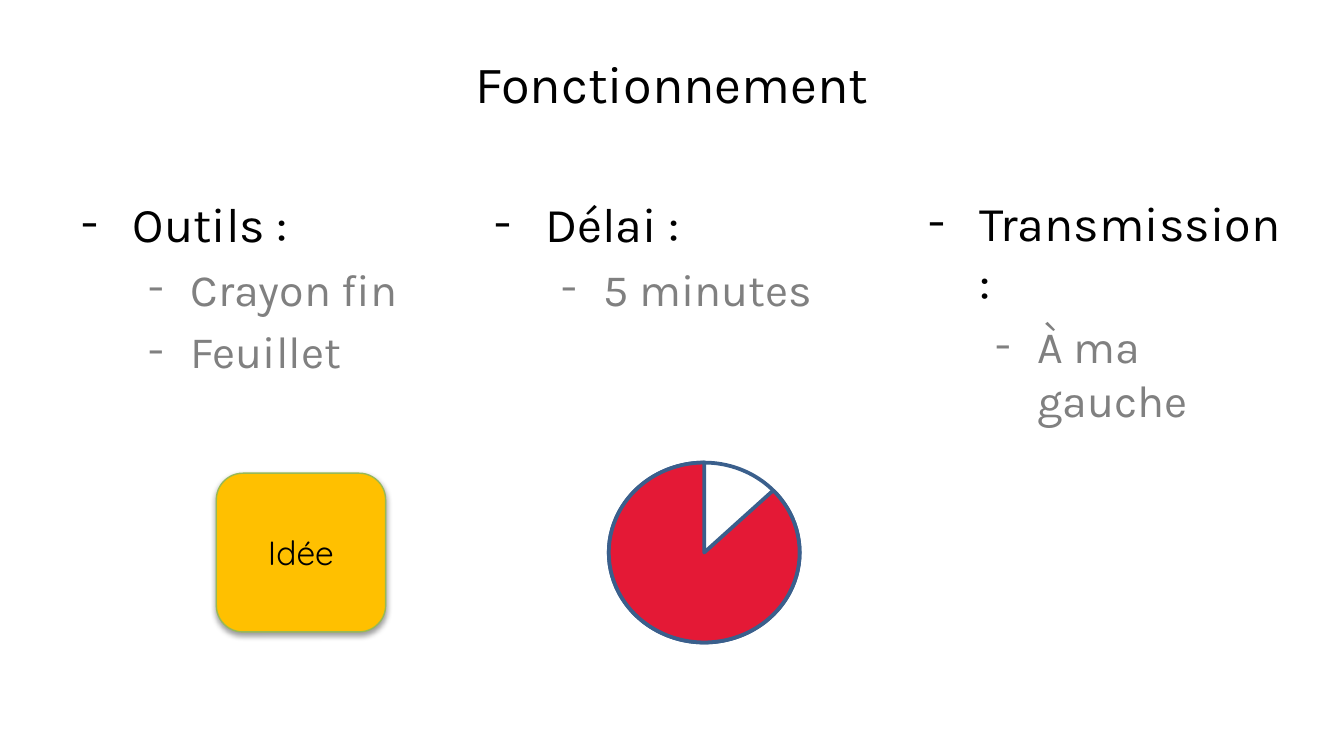
from lxml.etree import SubElement
from pptx import Presentation
from pptx.dml.color import RGBColor
from pptx.enum.shapes import MSO_SHAPE
from pptx.enum.text import MSO_ANCHOR, PP_ALIGN
from pptx.oxml.ns import qn
from pptx.util import Emu, Inches, Pt

# Widescreen, 16 by 9
WIDTH = Inches(10)
HEIGHT = Emu(WIDTH * 9 // 16)

BLACK = RGBColor(0x00, 0x00, 0x00)
GREY = RGBColor(0x80, 0x80, 0x80)
AMBER = RGBColor(0xFF, 0xC0, 0x00)
GREEN = RGBColor(0x98, 0xB9, 0x55)
RED = RGBColor(0xE4, 0x19, 0x36)
BLUE = RGBColor(0x3A, 0x5F, 0x8C)

# Left, top, width and height as shares of the slide
TITLE_AREA = (0, 0.059, 1, 0.068)
NOTE_AREA = (0.161, 0.626, 0.126, 0.21)
CLOCK_AREA = (0.453, 0.612, 0.142, 0.238)
COLUMNS = [
    ((0.051, 0.248, 0.409, 0.658), "Outils :", ["Crayon fin", "Feuillet"]),
    ((0.358, 0.248, 0.409, 0.294), "Délai :", ["5 minutes"]),
    ((0.681, 0.247, 0.283, 0.294), "Transmission :", ["À ma gauche"]),
]


def place(area):
    """Turn shares of the slide into lengths."""
    return [Emu(round(share * side))
            for share, side in zip(area, (WIDTH, HEIGHT, WIDTH, HEIGHT))]


def write(para, text, size=24, color=BLACK, font="Karla", align=None,
          before=0, indent=None, hanging=0, level=0):
    """Fill a paragraph; an indent gives it a dash bullet."""
    if indent is not None:
        props = para._p.get_or_add_pPr()
        props.set("marL", str(Inches(indent)))
        props.set("indent", str(-Inches(hanging)))
        SubElement(props, qn("a:buFont"), typeface=font)
        SubElement(props, qn("a:buChar"), char="-")
    para.level = level
    para.space_before = Pt(before)
    if align is not None:
        para.alignment = align
    span = para.add_run()
    span.text = text
    span.font.name = font
    span.font.size = Pt(size)
    span.font.color.rgb = color


def add_text_box(page, area):
    box = page.shapes.add_textbox(*place(area))
    box.text_frame.word_wrap = True
    return box.text_frame


def add_column(page, area, heading, items):
    frame = add_text_box(page, area)
    write(frame.paragraphs[0], heading, size=26, indent=0.38, hanging=0.38)
    for item in items:
        write(frame.add_paragraph(), item, color=GREY, before=4.8,
              indent=0.81, hanging=0.31, level=1)


def add_figure(page, kind, area, fill, line, weight):
    figure = page.shapes.add_shape(kind, *place(area))
    figure.shadow.inherit = False
    if fill is None:
        figure.fill.background()
    else:
        figure.fill.solid()
        figure.fill.fore_color.rgb = fill
    figure.line.color.rgb = line
    figure.line.width = Pt(weight)
    return figure


def add_drop_shadow(figure, blur, distance, opacity):
    effects = figure._element.spPr.find(qn("a:effectLst"))
    shadow = SubElement(effects, qn("a:outerShdw"), blurRad=str(Pt(blur)),
                        dist=str(Pt(distance)), dir=str(90 * 60000),
                        rotWithShape="0")
    color = SubElement(shadow, qn("a:srgbClr"), val=str(BLACK))
    SubElement(color, qn("a:alpha"), val=str(opacity * 1000))


def add_note(page):
    note = add_figure(page, MSO_SHAPE.ROUNDED_RECTANGLE, NOTE_AREA,
                      AMBER, GREEN, 0.75)
    add_drop_shadow(note, blur=3.1, distance=1.6, opacity=38)
    note.text_frame.vertical_anchor = MSO_ANCHOR.MIDDLE
    write(note.text_frame.paragraphs[0], "Idée", size=18, font="Quicksand",
          align=PP_ALIGN.CENTER)


def add_clock(page):
    add_figure(page, MSO_SHAPE.OVAL, CLOCK_AREA, None, BLUE, 2)
    elapsed = add_figure(page, MSO_SHAPE.PIE, CLOCK_AREA, RED, BLUE, 2)
    # Angles from three o'clock, 0.6 units per degree
    for index, degrees in enumerate((318, 270)):
        elapsed.adjustments[index] = degrees * 0.6


def main():
    deck = Presentation()
    deck.slide_width, deck.slide_height = WIDTH, HEIGHT
    page = deck.slides.add_slide(deck.slide_layouts[6])

    # Title
    write(add_text_box(page, TITLE_AREA).paragraphs[0], "Fonctionnement",
          size=28, align=PP_ALIGN.CENTER)

    # Three bulleted columns
    for area, heading, items in COLUMNS:
        add_column(page, area, heading, items)

    # Illustrations below the columns
    add_note(page)
    add_clock(page)

    deck.save("out.pptx")


if __name__ == "__main__":
    main()
